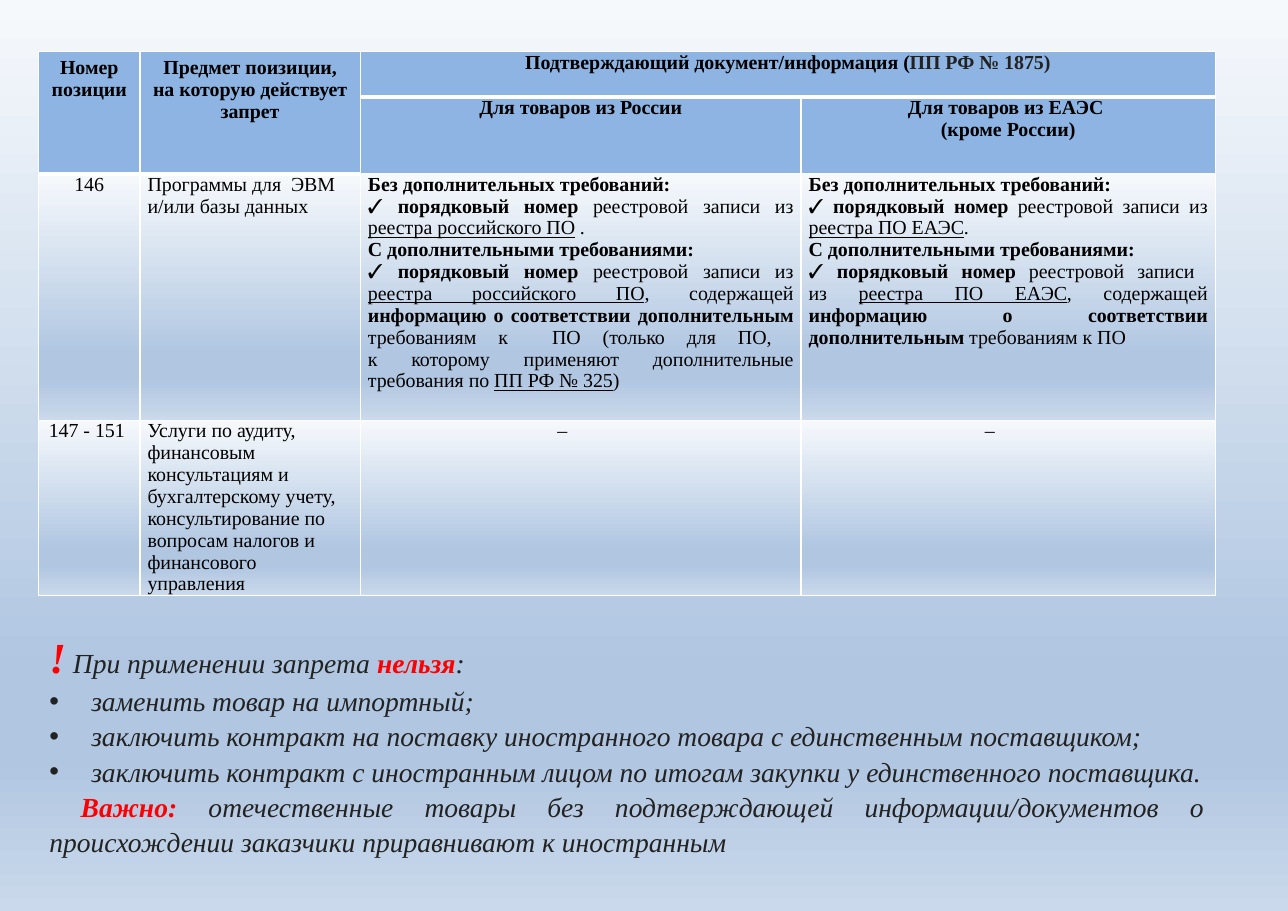
from pptx import Presentation
from pptx.dml.color import RGBColor
from pptx.enum.text import MSO_AUTO_SIZE, PP_ALIGN
from pptx.oxml.ns import qn
from pptx.util import Inches, Pt
from lxml.etree import SubElement

COLOURS = {"text": "000000", "dark": "222222", "red": "FF0000",
           "header": "8EB4E3", "border": "FFFFFF"}
SKY = [(0, "F6F9FC"), (74, "B0C6E1"), (83, "B0C6E1"), (100, "CAD9EB")]


def fill_with_sky(fill, element):
    """Give the fill found inside element the four-stop vertical gradient."""
    fill.gradient()
    fill.gradient_angle = 270
    stops = element.find(".//" + qn("a:gsLst"))
    stops.clear()
    for percent, colour in SKY:
        stop = SubElement(stops, qn("a:gs"), pos=str(percent * 1000))
        SubElement(stop, qn("a:srgbClr"), val=colour)


def write_spans(para, spans, size, colour, italic=False):
    """Add (text, marks) spans; marks: b bold, u underline, r red, d dark."""
    for text, marks in spans:
        for number, line in enumerate(text.split("\n")):
            if number:
                para.add_line_break()
            span = para.add_run()
            span.text = line
            font = span.font
            font.name, font.size, font.italic = "Times New Roman", Pt(size), italic
            font.bold, font.underline = "b" in marks, "u" in marks
            name = "red" if "r" in marks else "dark" if "d" in marks else colour
            font.color.rgb = RGBColor.from_string(COLOURS[name])


deck = Presentation()
deck.slide_width, deck.slide_height = Inches(11.69), Inches(8.27)
page = deck.slides.add_slide(deck.slide_layouts[6])
fill_with_sky(page.background.fill, page.background._cSld)

# Table: each cell is a list of paragraphs, each paragraph a list of spans
plain_rule = [("Без дополнительных требований:", "b")]
extra_rule = [("С дополнительными требованиями:", "b")]
check = [("✓ ", ""), ("порядковый номер", "b")]
russian = ("реестра российского ПО", "u")
eurasian = ("реестра ПО ЕАЭС", "u")
dash = [[("–", "")]]
CENTER, LEFT, JUSTIFY = PP_ALIGN.CENTER, PP_ALIGN.LEFT, PP_ALIGN.JUSTIFY

cells = {
    (0, 0): (CENTER, [[("Номер позиции", "b")]]),
    (0, 1): (CENTER, [[("Предмет поизиции, на которую действует запрет", "b")]]),
    (0, 2): (CENTER, [[("Подтверждающий документ/информация (", "b"),
                       ("ПП РФ № 1875)", "bd")]]),
    (1, 2): (CENTER, [[("Для товаров из России", "b")]]),
    (1, 3): (CENTER, [[("Для товаров из ЕАЭС ", "b")], [("(кроме России)", "b")]]),
    (2, 0): (CENTER, [[("146", "")]]),
    (2, 1): (LEFT, [[("Программы для  ЭВМ и/или базы данных", "")]]),
    (2, 2): (JUSTIFY, [
        plain_rule,
        check + [(" реестровой записи из ", ""), russian, (" .", "")],
        extra_rule,
        check + [(" реестровой записи из ", ""), russian, (", содержащей ", ""),
                 ("информацию о соответствии дополнительным ", "b"),
                 ("требованиям к  ПО (только для ПО, \nк которому применяют "
                  "дополнительные требования по ", ""),
                 ("ПП РФ № 325", "u"), (") ", "")]]),
    (2, 3): (JUSTIFY, [
        plain_rule,
        check + [(" реестровой записи из ", ""), eurasian, (".", "")],
        extra_rule,
        check + [(" реестровой записи \nиз ", ""), eurasian, (", содержащей ", ""),
                 ("информацию о соответствии дополнительным ", "b"),
                 ("требованиям к ПО", "")]]),
    (3, 0): (CENTER, [[("147 - 151 ", "")]]),
    (3, 1): (LEFT, [[("Услуги по аудиту, финансовым консультациям и бухгалтерскому "
                      "учету, консультирование по вопросам налогов и финансового "
                      "управления", "")]]),
    (3, 2): (CENTER, dash),
    (3, 3): (CENTER, dash),
}

widths, heights = [0.92, 2, 4, 3.76], [0.41, 0.69, 2.24, 1.59]
table = page.shapes.add_table(4, 4, Inches(0.35), Inches(0.47),
                              Inches(sum(widths)), Inches(sum(heights))).table
table.first_row = table.horz_banding = False
for column, width in zip(table.columns, widths):
    column.width = Inches(width)
for row, height in zip(table.rows, heights):
    row.height = Inches(height)

for r in range(4):
    for c in range(4):
        cell = table.cell(r, c)
        properties = cell._tc.get_or_add_tcPr()
        for side in "LRTB":
            heavy = (r, side) in [(0, "B"), (1, "T")]
            line = SubElement(properties, qn("a:ln" + side), w=str(Pt(3 if heavy else 1)))
            SubElement(SubElement(line, qn("a:solidFill")), qn("a:srgbClr"),
                       val=COLOURS["border"])
        if r < 2:
            cell.fill.solid()
            cell.fill.fore_color.rgb = RGBColor.from_string(COLOURS["header"])
        else:
            fill_with_sky(cell.fill, cell._tc)
        if (r, c) not in cells:
            continue
        if (r, c) not in [(0, 0), (0, 1)]:
            cell.margin_left = cell.margin_right = Inches(0.07)
            cell.margin_top = cell.margin_bottom = 0
        alignment, paragraphs = cells[r, c]
        if paragraphs is dash:
            cell.margin_right = Inches(0.4)
        for number, spans in enumerate(paragraphs):
            frame = cell.text_frame
            para = frame.add_paragraph() if number else frame.paragraphs[0]
            para.alignment = alignment
            write_spans(para, spans, 13, "text")

for corner, end in [((0, 0), (1, 0)), ((0, 1), (1, 1)), ((0, 2), (0, 3))]:
    table.cell(*corner).merge(table.cell(*end))

# Warning below the table
warning = [
    (False, [("!", "br"), (" При применении запрета ", ""), ("нельзя", "br"), (":  ", "")]),
    (True, [("заменить товар на импортный;", "")]),
    (True, [("заключить контракт на поставку иностранного товара "
             "с единственным поставщиком;", "")]),
    (True, [("заключить контракт с иностранным лицом по итогам закупки "
             "у единственного поставщика.", "")]),
    (False, [(" ", ""), ("Важно:", "br"),
             (" отечественные товары без подтверждающей информации/документов "
              "о происхождении заказчики приравнивают к иностранным", "")]),
]
box = page.shapes.add_textbox(Inches(0.35), Inches(5.64), Inches(10.68), Inches(2.23))
frame = box.text_frame
frame.word_wrap = True
frame.auto_size = MSO_AUTO_SIZE.SHAPE_TO_FIT_TEXT
for number, (bulleted, spans) in enumerate(warning):
    para = frame.add_paragraph() if number else frame.paragraphs[0]
    if bulleted:
        properties = para._p.get_or_add_pPr()
        properties.set("marL", str(Inches(0.38)))
        properties.set("indent", str(-Inches(0.38)))
        SubElement(properties, qn("a:buFont"), typeface="Arial")
        SubElement(properties, qn("a:buChar"), char="•")
    para.alignment = JUSTIFY
    para.line_spacing = 1.07
    write_spans(para, spans, 18, "dark", italic=True)
frame.paragraphs[0].runs[0].font.size = Pt(28)

deck.save("out.pptx")
